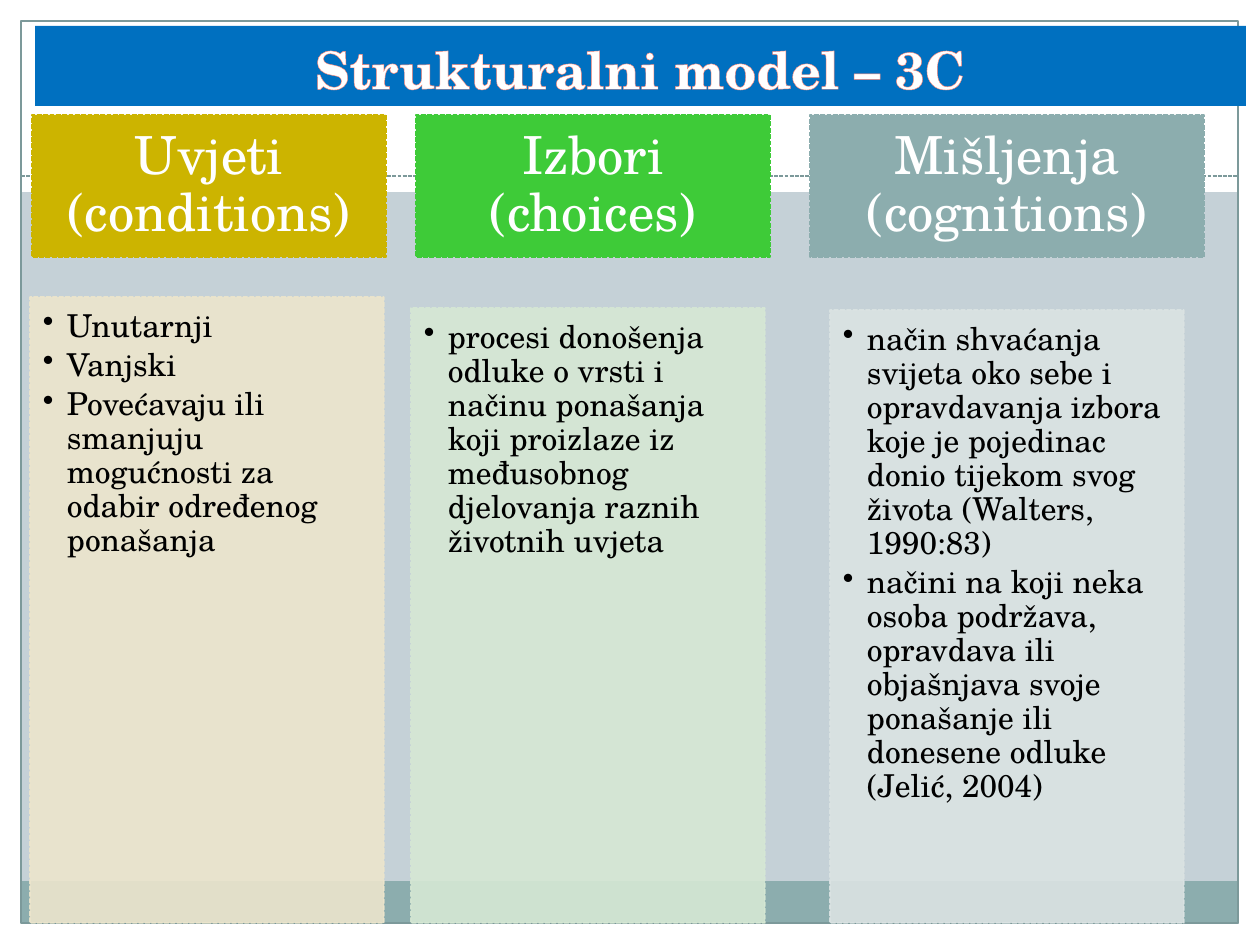
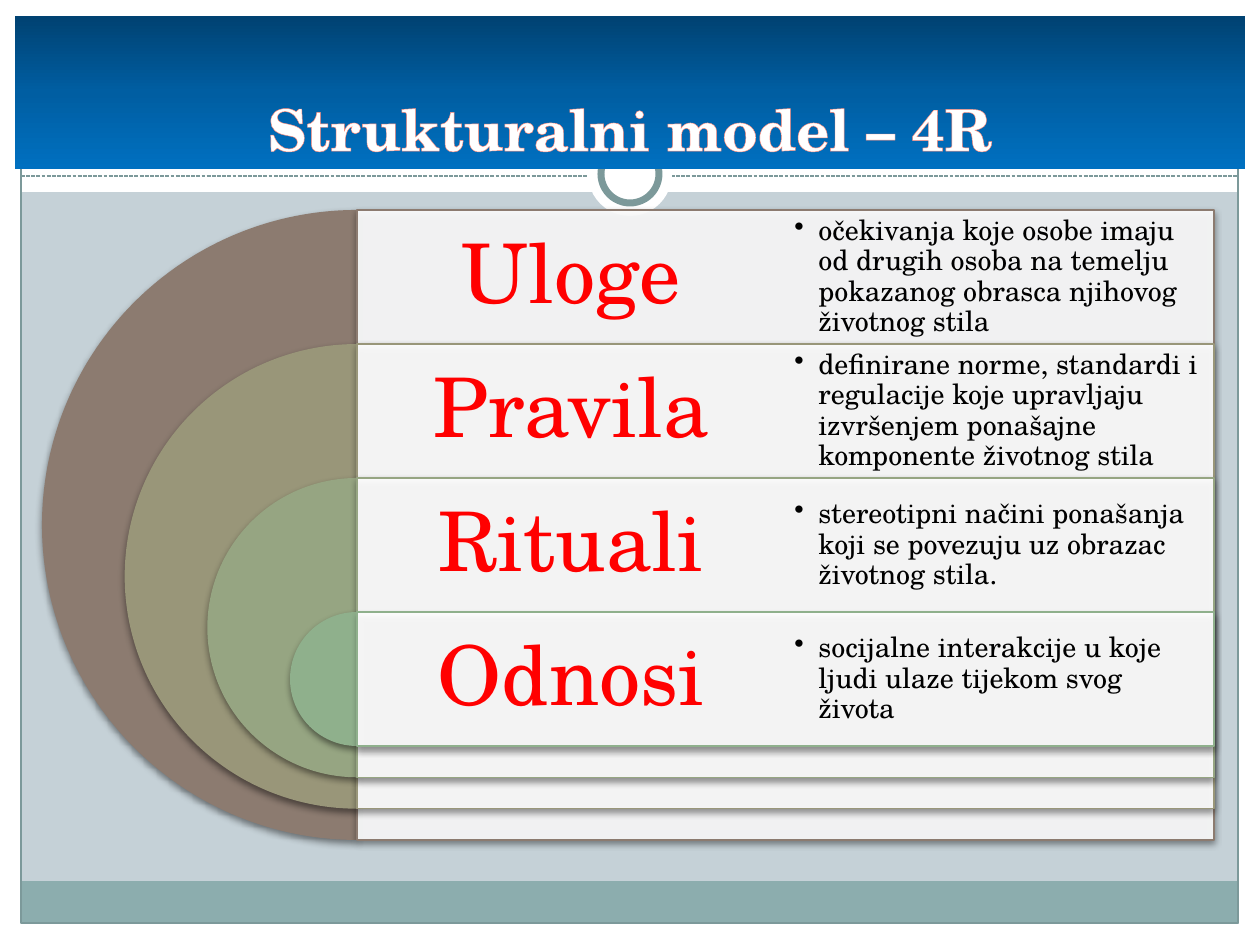
"""Builds two slides on the structural model of a lifestyle: 3C and 4R."""
from lxml import etree
from pptx import Presentation
from pptx import util as u
from pptx.dml.color import RGBColor
from pptx.enum import dml, shapes, text
from pptx.oxml.ns import qn

PX = 914400 / 126
FONT = "TeX Gyre Schola"
WHITE, BLACK, RED = "FFFFFF", "000000", "FF0000"
BACKGROUND, BAND, RULE = "C5D1D7", "8CADAE", "7C999A"
TITLE_BLUE, TITLE_OUTLINE = "0070C0", "FE8675"
TITLE_GRADIENT = [(0, "004272"), (50, "005EA2"), (100, TITLE_BLUE)]
RECT, OVAL, PIE = (shapes.MSO_SHAPE.RECTANGLE, shapes.MSO_SHAPE.OVAL,
                   shapes.MSO_SHAPE.PIE)
LEFT, CENTER = text.PP_ALIGN.LEFT, text.PP_ALIGN.CENTER
TOP, MIDDLE = text.MSO_ANCHOR.TOP, text.MSO_ANCHOR.MIDDLE

MARGINS = [(0, 924, 1260, 21), (0, 0, 1260, 192), (0, 0, 21, 945), (1239, 0, 21, 945)]

COLUMNS = [
    {"heading": "Uvjeti (conditions)", "color": "CCB400", "tint": "ECE5CC",
     "heading_x": 32, "heading_width": 354, "body_x": 30, "body_y": 297,
     "points": ["Unutarnji", "Vanjski",
                "Povećavaju ili smanjuju mogućnosti za odabir određenog ponašanja"]},
    {"heading": "Izbori (choices)", "color": "3ECB38", "tint": "D6E8D4",
     "heading_x": 416, "heading_width": 354, "body_x": 411, "body_y": 308,
     "points": ["procesi donošenja odluke o vrsti i načinu ponašanja koji proizlaze iz "
                "međusobnog djelovanja raznih životnih uvjeta"]},
    {"heading": "Mišljenja (cognitions)", "color": "8CADAE", "tint": "DBE3E3",
     "heading_x": 810, "heading_width": 394, "body_x": 830, "body_y": 310,
     "points": ["način shvaćanja svijeta oko sebe i opravdavanja izbora koje je pojedinac "
                "donio tijekom svog života (Walters, 1990:83)",
                "načini na koji neka osoba podržava, opravdava ili objašnjava svoje "
                "ponašanje ili donesene odluke (Jelić, 2004)"]},
]

ROLES = [
    ("Uloge", "8C7B70", "očekivanja koje osobe imaju od drugih osoba na temelju "
                        "pokazanog obrasca njihovog životnog stila"),
    ("Pravila", "999679", "definirane norme, standardi i regulacije koje upravljaju "
                          "izvršenjem ponašajne komponente životnog stila"),
    ("Rituali", "96A582", "stereotipni načini ponašanja koji se povezuju uz obrazac "
                          "životnog stila."),
    ("Odnosi", "8FB08C", "socijalne interakcije u koje ljudi ulaze tijekom svog života"),
]


def px(length):
    return u.Emu(round(length * PX))


def rgb(value):
    return RGBColor.from_string(value)


def add_xml(parent, tag, **attributes):
    return etree.SubElement(parent, qn(tag), attributes)


def add_color(parent, value, alpha=None):
    color = add_xml(parent, "a:srgbClr", val=value)
    if alpha:
        add_xml(color, "a:alpha", val=str(alpha * 1000))


def add_box(slide, kind, area, fill=None, line=None, width=0.75, dash=None,
            fill_alpha=None, line_alpha=None, shadow=False):
    box = slide.shapes.add_shape(kind, *map(px, area))
    box.shadow.inherit = False
    if fill:
        box.fill.solid()
        box.fill.fore_color.rgb = rgb(fill)
    else:
        box.fill.background()
    if line:
        box.line.color.rgb = rgb(line)
        box.line.width = u.Pt(width)
        if dash:
            box.line.dash_style = dash
    else:
        box.line.fill.background()
    properties = box.element.spPr
    for route, alpha in (("a:solidFill", fill_alpha), ("a:ln/a:solidFill", line_alpha)):
        if alpha:
            steps = "/".join(qn(step) for step in (route + "/a:srgbClr").split("/"))
            add_xml(properties.find(steps), "a:alpha", val=str(alpha * 1000))
    if shadow:
        effect = add_xml(properties.find(qn("a:effectLst")), "a:outerShdw",
                         blurRad=str(u.Pt(4)), dist=str(u.Pt(2)), dir="5400000",
                         rotWithShape="0")
        add_color(effect, BLACK, 45)
    return box


def write(box, lines, size, color, insets, anchor=MIDDLE, bullets=False):
    frame = box.text_frame
    frame.word_wrap = True
    frame.vertical_anchor = anchor
    (frame.margin_left, frame.margin_top,
     frame.margin_right, frame.margin_bottom) = map(px, insets)
    for index, line in enumerate(lines):
        para = frame.paragraphs[0] if index == 0 else frame.add_paragraph()
        para.alignment = LEFT if bullets else CENTER
        para.line_spacing = 0.9
        if bullets:
            para.space_after = u.Pt(3)
            properties = para._p.get_or_add_pPr()
            properties.set("marL", str(px(24)))
            properties.set("indent", str(px(-24)))
            add_xml(properties, "a:buChar", char="•")
        add_span(para, line, size, color)


def add_span(para, words, size, color, bold=False):
    span = para.add_run()
    span.text = words
    span.font.name = FONT
    span.font.size = u.Pt(size)
    span.font.bold = bold
    span.font.color.rgb = rgb(color)
    return span


def add_text(slide, area, *args, **options):
    write(slide.shapes.add_textbox(*map(px, area)), *args, **options)


def add_rule(slide):
    rule = slide.shapes.add_connector(shapes.MSO_CONNECTOR.STRAIGHT,
                                      px(21), px(176), px(1239), px(176))
    rule.line.color.rgb = rgb(RULE)
    rule.line.width = u.Pt(0.75)
    rule.line.dash_style = dml.MSO_LINE.SQUARE_DOT
    add_xml(rule.element.spPr, "a:effectLst")


def start_slide(deck, title, area, size, ring=False):
    slide = deck.slides.add_slide(deck.slide_layouts[5])
    slide.background.fill.solid()
    slide.background.fill.fore_color.rgb = rgb(BACKGROUND)
    for margin in MARGINS:
        add_box(slide, RECT, margin, WHITE)
    add_box(slide, RECT, (21, 881, 1217, 43), BAND)
    add_box(slide, RECT, (21, 21, 1217, 902), line=RULE)
    add_rule(slide)
    if ring:
        add_box(slide, OVAL, (588, 132, 84, 84), WHITE)
        add_box(slide, OVAL, (601, 145, 58, 58), WHITE, RULE, 4)

    box = slide.shapes.title
    slide.shapes.element.append(box.element)
    box.left, box.top, box.width, box.height = map(px, area)
    box.fill.solid()
    box.fill.fore_color.rgb = rgb(TITLE_BLUE)
    frame = box.text_frame
    frame.auto_size = text.MSO_AUTO_SIZE.NONE
    frame.vertical_anchor = text.MSO_ANCHOR.BOTTOM
    para = frame.paragraphs[0]
    para.alignment = CENTER
    span = add_span(para, title, size, WHITE, bold=True)
    outline = etree.Element(qn("a:ln"), w=str(u.Pt(2.48)))
    add_color(add_xml(outline, "a:solidFill"), TITLE_OUTLINE)
    span._r.get_or_add_rPr().insert(0, outline)
    return slide


def shade_title(box):
    box.fill.gradient()
    box.fill.gradient_angle = 270
    stops = box.element.spPr.find(qn("a:gradFill")).find(qn("a:gsLst"))
    for stop in list(stops):
        stops.remove(stop)
    for position, color in TITLE_GRADIENT:
        add_color(add_xml(stops, "a:gs", pos=str(position * 1000)), color)


def build_columns(deck):
    slide = start_slide(deck, "Strukturalni model – 3C", (35, 26, 1211, 80), 29.7)
    dash = dml.MSO_LINE.SQUARE_DOT
    for column in COLUMNS:
        color, tint, body_y = column["color"], column["tint"], column["body_y"]
        heading = add_box(slide, RECT, (column["heading_x"], 115, column["heading_width"], 142),
                          color, color, 0.9, dash)
        write(heading, [column["heading"]], 30, WHITE, (29, 16, 29, 16))
        body = add_box(slide, RECT, (column["body_x"], body_y, 354, 923 - body_y),
                       tint, tint, 0.9, dash, fill_alpha=90, line_alpha=90)
        write(body, column["points"], 18, BLACK, (13, 13, 18, 20), TOP, bullets=True)


def build_rings(deck):
    slide = start_slide(deck, "Strukturalni model – 4R", (15, 16, 1230, 153), 33, ring=True)
    shade_title(slide.shapes.title)
    center, first_top, row, largest, bar = 357, 210, 134, 630, 857
    shrink = (largest - row) / (len(ROLES) - 1)
    for index, (name, color, meaning) in enumerate(ROLES):
        top, size = first_top + row * index, largest - shrink * index
        half = add_box(slide, PIE, (center - size / 2, top, size, size), color, shadow=True)
        half.adjustments[0], half.adjustments[1] = 54, 162
        add_box(slide, RECT, (center, top, bar, size), WHITE, color,
                fill_alpha=90, shadow=True)
        add_text(slide, (center, top, bar / 2, row), [name], 47, RED, (25,) * 4)
        add_text(slide, (center + bar / 2, top, bar / 2, row), [meaning], 16, BLACK,
                 (9,) * 4, bullets=True)


def main():
    deck = Presentation()
    deck.slide_width, deck.slide_height = px(1260), px(945)
    build_columns(deck)
    build_rings(deck)
    deck.save("out.pptx")


if __name__ == "__main__":
    main()
